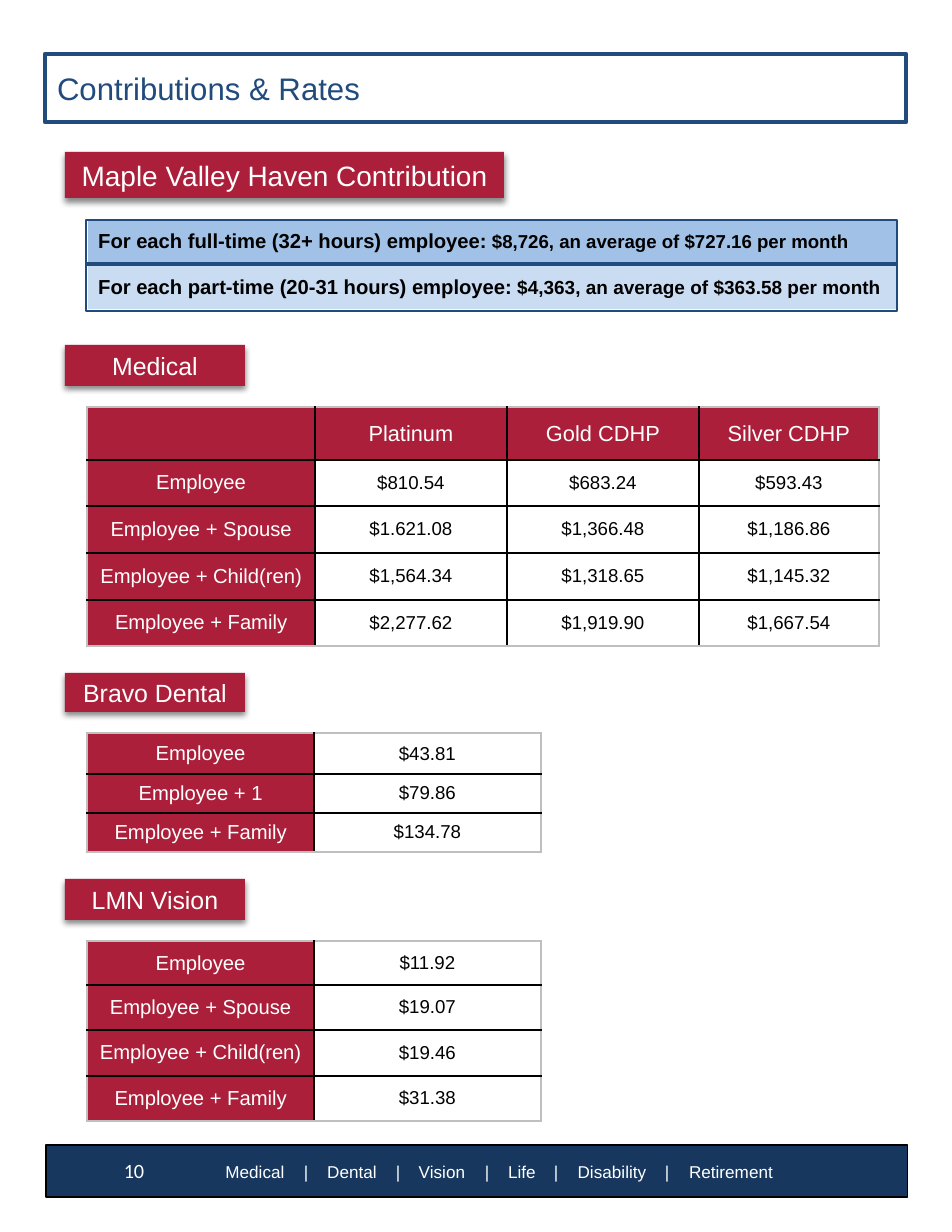
from lxml import etree
from pptx import Presentation
from pptx import util as u
from pptx.dml.color import RGBColor
from pptx.enum import shapes, text
from pptx.oxml.ns import qn

PX = 914400 // 112
THEME = {
    "navy": "214B7D", "footer": "17375E", "red": "AB1F3A", "white": "FFFFFF",
    "black": "000000", "grey": "BFBFBF", "blue": "A1C1E7", "pale": "CADCF2",
    "title": 20, "banner": 18, "badge": 16, "header": 14, "label": 13,
    "value": 12, "footer_text": 11,
}
LEFT, CENTER = text.PP_ALIGN.LEFT, text.PP_ALIGN.CENTER


def write(frame, pieces, color, align=CENTER, bold=False, font="Arial"):
    """Fill the first paragraph with (words, size) runs."""
    paragraph = frame.paragraphs[0]
    paragraph.alignment = align
    for words, size in pieces:
        run = paragraph.add_run()
        run.text = words
        run.font.name, run.font.size, run.font.bold = font, u.Pt(size), bold
        run.font.color.rgb = RGBColor.from_string(THEME[color])


def paint_cell(cell, fill, edges):
    """Fill a cell and draw its edges, given as (side, colour, points)."""
    properties = cell._tc.get_or_add_tcPr()
    for side, color, points in edges:
        line = etree.SubElement(properties, qn("a:ln" + side), w=str(u.Pt(points)))
        solid = etree.SubElement(line, qn("a:solidFill"))
        etree.SubElement(solid, qn("a:srgbClr"), val=THEME[color])
    cell.fill.solid()
    cell.fill.fore_color.rgb = RGBColor.from_string(THEME[fill])
    cell.vertical_anchor = text.MSO_ANCHOR.MIDDLE


presentation = Presentation()
presentation.slide_width, presentation.slide_height = 952 * PX, 1232 * PX
slide = presentation.slides.add_slide(presentation.slide_layouts[6])

# Title frame and footer bar
for box, fill, line, points in [
    ((45, 54, 861, 68), "white", "navy", 3),
    ((46, 1145, 862, 52), "footer", "black", 0.75),
]:
    bar = slide.shapes.add_shape(shapes.MSO_SHAPE.RECTANGLE, *[n * PX for n in box])
    bar.shadow.inherit = False
    bar.fill.solid()
    bar.fill.fore_color.rgb = RGBColor.from_string(THEME[fill])
    bar.line.color.rgb = RGBColor.from_string(THEME[line])
    bar.line.width = u.Pt(points)

title = slide.shapes.add_textbox(46 * PX, 64 * PX, 830 * PX, 46 * PX)
title.text_frame.word_wrap = True
write(title.text_frame, [("Contributions & Rates", THEME["title"])], "navy", LEFT)

# Section badges
for words, top, width, height, size in [
    ("Maple Valley Haven Contribution", 152, 439, 46, "banner"),
    ("Medical", 345, 180, 41, "badge"),
    ("Bravo Dental", 673, 180, 39, "badge"),
    ("LMN Vision", 879, 180, 41, "badge"),
]:
    badge = slide.shapes.add_shape(
        shapes.MSO_SHAPE.RECTANGLE, 65 * PX, top * PX, width * PX, height * PX)
    badge.shadow.inherit = False
    badge.fill.solid()
    badge.fill.fore_color.rgb = RGBColor.from_string(THEME["red"])
    badge.line.fill.background()
    effects = badge._element.spPr.find(qn("a:effectLst"))
    shadow = etree.SubElement(
        effects, qn("a:outerShdw"), blurRad=str(u.Pt(4)), dist=str(u.Pt(2.5)),
        dir="5400000", algn="t", rotWithShape="0")
    shade = etree.SubElement(shadow, qn("a:srgbClr"), val=THEME["black"])
    etree.SubElement(shade, qn("a:alpha"), val="47000")
    frame = badge.text_frame
    frame.margin_left = frame.margin_right = 0
    frame.vertical_anchor = text.MSO_ANCHOR.MIDDLE
    write(frame, [(words, THEME[size])], "white")

# Rate tables
for top, columns, heights, rows in [
    (407, [228, 192, 192, 180], [53, 46, 47, 47, 46], [
        ["", "Platinum", "Gold CDHP", "Silver CDHP"],
        ["Employee", "$810.54", "$683.24", "$593.43"],
        ["Employee + Spouse", "$1.621.08", "$1,366.48", "$1,186.86"],
        ["Employee + Child(ren)", "$1,564.34", "$1,318.65", "$1,145.32"],
        ["Employee + Family", "$2,277.62", "$1,919.90", "$1,667.54"],
    ]),
    (733, [227, 227], [41, 39, 39], [
        ["Employee", "$43.81"],
        ["Employee + 1", "$79.86"],
        ["Employee + Family", "$134.78"],
    ]),
    (941, [227, 227], [44, 45, 46, 45], [
        ["Employee", "$11.92"],
        ["Employee + Spouse", "$19.07"],
        ["Employee + Child(ren)", "$19.46"],
        ["Employee + Family", "$31.38"],
    ]),
]:
    table = slide.shapes.add_table(
        len(rows), len(columns), 87 * PX, top * PX,
        sum(columns) * PX, sum(heights) * PX).table
    table.first_row = table.horz_banding = False
    for column, width in zip(table.columns, columns):
        column.width = width * PX
    for r, (row, height) in enumerate(zip(rows, heights)):
        table.rows[r].height = height * PX
        for c, words in enumerate(row):
            header = not rows[0][0] and r == 0
            red = header or c == 0
            outer = {"L": c == 0, "R": c == len(columns) - 1,
                     "T": r == 0, "B": r == len(rows) - 1}
            cell = table.cell(r, c)
            paint_cell(cell, "red" if red else "white", [
                (side, "grey" if outside else "black", 1)
                for side, outside in outer.items()])
            size = "header" if header else "label" if red else "value"
            write(cell.text_frame, [(words, THEME[size])], "white" if red else "black")

# Employer contribution table and its frame
contributions = [
    ("For each full-time (32+ hours) employee: ",
     "$8,726, an average of $727.16 per month", THEME["value"], "blue"),
    ("For each part-time (20-31 hours) employee: ",
     "$4,363, an average of $363.58 per month", 12.2, "pale"),
]
table = slide.shapes.add_table(2, 1, 87 * PX, 218 * PX, 810 * PX, 92 * PX).table
table.first_row = table.horz_banding = False
for r, (group, amount, size, fill) in enumerate(contributions):
    table.rows[r].height = 46 * PX
    rule = ("navy", 3)
    edge = ("white", 1)
    paint_cell(table.cell(r, 0), fill, [
        ("L", *edge), ("R", *edge),
        ("T", *(rule if r else edge)), ("B", *(edge if r else rule))])
    write(table.cell(r, 0).text_frame, [(group, THEME["label"]), (amount, size)],
          "black", LEFT, bold=True)

outline = slide.shapes.add_shape(
    shapes.MSO_SHAPE.RECTANGLE, 86 * PX, 220 * PX, 811 * PX, 91 * PX)
outline.shadow.inherit = False
outline.fill.background()
outline.line.color.rgb = RGBColor.from_string(THEME["navy"])
outline.line.width = u.Pt(1.5)

# Footer: page number and sections on centred tab stops
footer = slide.shapes.add_textbox(48 * PX, 1153 * PX, 856 * PX, 36 * PX)
frame = footer.text_frame
frame.word_wrap = True
frame.margin_left = 0
sections = ["Medical", "Dental", "Vision", "Life", "Disability", "Retirement"]
write(frame, [("\t10", THEME["label"])], "white", LEFT, font="Calibri")
write(frame, [("\t" + "\t|\t".join(sections), THEME["footer_text"])], "white", LEFT)
tabs = etree.SubElement(frame.paragraphs[0]._p.get_or_add_pPr(), qn("a:tabLst"))
for center in [134, 255, 306, 352, 398, 442, 487, 522, 556, 612, 667, 731]:
    etree.SubElement(tabs, qn("a:tab"), pos=str((center - 48) * PX), algn="ctr")

presentation.save("out.pptx")
